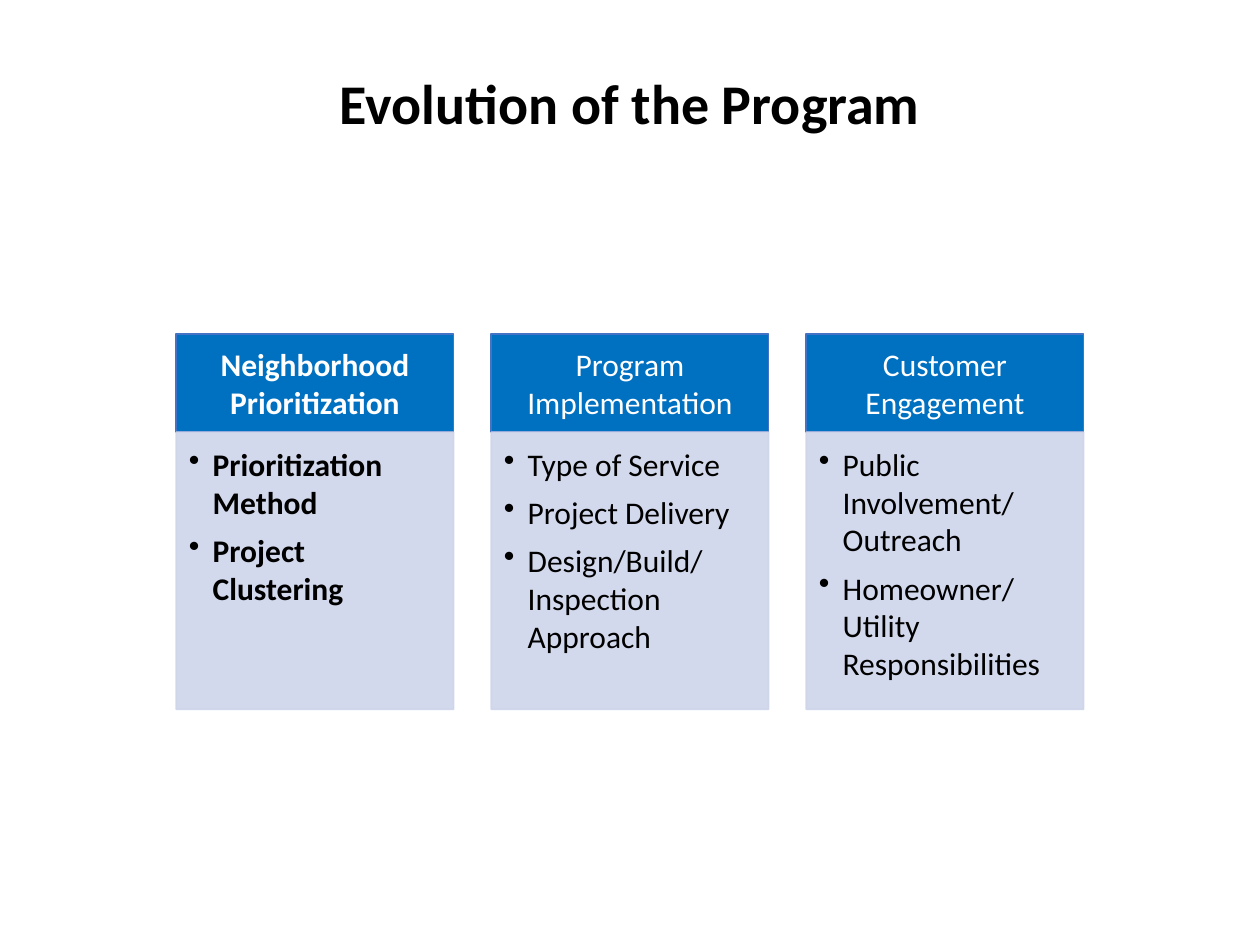
from dataclasses import dataclass

from lxml import etree
from pptx import Presentation
from pptx.dml.color import RGBColor
from pptx.enum.shapes import MSO_SHAPE
from pptx.enum.text import MSO_ANCHOR, PP_ALIGN
from pptx.oxml.ns import qn
from pptx.util import Inches, Pt

RECT = MSO_SHAPE.RECTANGLE
MIDDLE, TOP = MSO_ANCHOR.MIDDLE, MSO_ANCHOR.TOP
CENTER, LEFT = PP_ALIGN.CENTER, PP_ALIGN.LEFT

WIDTH, PITCH, START = 2.2, 2.5, 1.4
HEAD_TOP, HEAD_TALL, BODY_TALL = 2.65, 0.78, 2.2


@dataclass
class Column:
    head: str
    items: list[str]
    bold: bool = False


@dataclass
class Panel:
    top: float
    tall: float
    fill: str
    line: str
    ink: str
    insets: tuple[float, float, float, float]
    anchor: MSO_ANCHOR
    align: PP_ALIGN
    alpha: int = 100
    bullets: bool = False


HEAD = Panel(HEAD_TOP, HEAD_TALL, "0070C0", "4472C4", "FFFFFF",
             (0.14, 0.08, 0.14, 0.08), MIDDLE, CENTER)
BODY = Panel(HEAD_TOP + HEAD_TALL, BODY_TALL, "CFD5EA", "CFD5EA", "000000",
             (0.1, 0.1, 0.14, 0.16), TOP, LEFT, alpha=90, bullets=True)

COLUMNS = [
    Column("Neighborhood Prioritization",
           ["Prioritization Method", "Project Clustering"], bold=True),
    Column("Program Implementation",
           ["Type of Service", "Project Delivery",
            "Design/Build/ Inspection Approach"]),
    Column("Customer Engagement",
           ["Public Involvement/ Outreach",
            "Homeowner/ Utility Responsibilities"]),
]


def tint(color, code: str, alpha: int = 100) -> None:
    """Set a colour format from a hex string and an opacity in percent."""
    color.rgb = RGBColor.from_string(code)


def fade(shape, alpha: int) -> None:
    """Give the fill and line of a shape an opacity in percent."""
    for color in shape._element.spPr.iter(qn("a:srgbClr")):
        etree.SubElement(color, qn("a:alpha")).set("val", str(alpha * 1000))


def add_bullet(para) -> None:
    props = para._p.get_or_add_pPr()
    props.set("marL", str(Inches(0.19)))
    props.set("indent", str(Inches(-0.19)))
    etree.SubElement(props, qn("a:buChar")).set("char", "•")


def set_font(para, size: int, code: str, bold: bool) -> None:
    font = para.font
    font.name, font.size, font.bold = "Calibri", Pt(size), bold
    tint(font.color, code)


def add_title(slide, text: str) -> None:
    box = slide.shapes.add_textbox(Inches(0.69), Inches(0.4),
                                   Inches(8.62), Inches(0.88))
    frame = box.text_frame
    frame.word_wrap, frame.vertical_anchor = True, MIDDLE
    para = frame.paragraphs[0]
    para.text, para.alignment, para.line_spacing = text, CENTER, 0.9
    set_font(para, 32, "000000", True)


def add_panel(slide, left: float, panel: Panel, lines: list[str],
              bold: bool) -> None:
    shape = slide.shapes.add_shape(RECT, Inches(left), Inches(panel.top),
                                   Inches(WIDTH), Inches(panel.tall))
    shape.shadow.inherit = False
    shape.fill.solid()
    tint(shape.fill.fore_color, panel.fill)
    tint(shape.line.color, panel.line)
    shape.line.width = Pt(1)
    if panel.alpha < 100:
        fade(shape, panel.alpha)

    frame = shape.text_frame
    frame.word_wrap, frame.vertical_anchor = True, panel.anchor
    (frame.margin_left, frame.margin_top,
     frame.margin_right, frame.margin_bottom) = map(Inches, panel.insets)
    frame.text = "\n".join(lines)
    for para in frame.paragraphs:
        para.alignment = panel.align
        para.space_after = Pt(6)
        if panel.bullets:
            add_bullet(para)
        set_font(para, 18, panel.ink, bold)


def main() -> None:
    deck = Presentation()
    deck.slide_width, deck.slide_height = Inches(10), Inches(7.5)
    slide = deck.slides.add_slide(deck.slide_layouts[6])
    add_title(slide, "Evolution of the Program")
    for i, col in enumerate(COLUMNS):
        left = START + i * PITCH
        add_panel(slide, left, HEAD, [col.head], col.bold)
        add_panel(slide, left, BODY, col.items, col.bold)
    deck.save("out.pptx")


if __name__ == "__main__":
    main()
